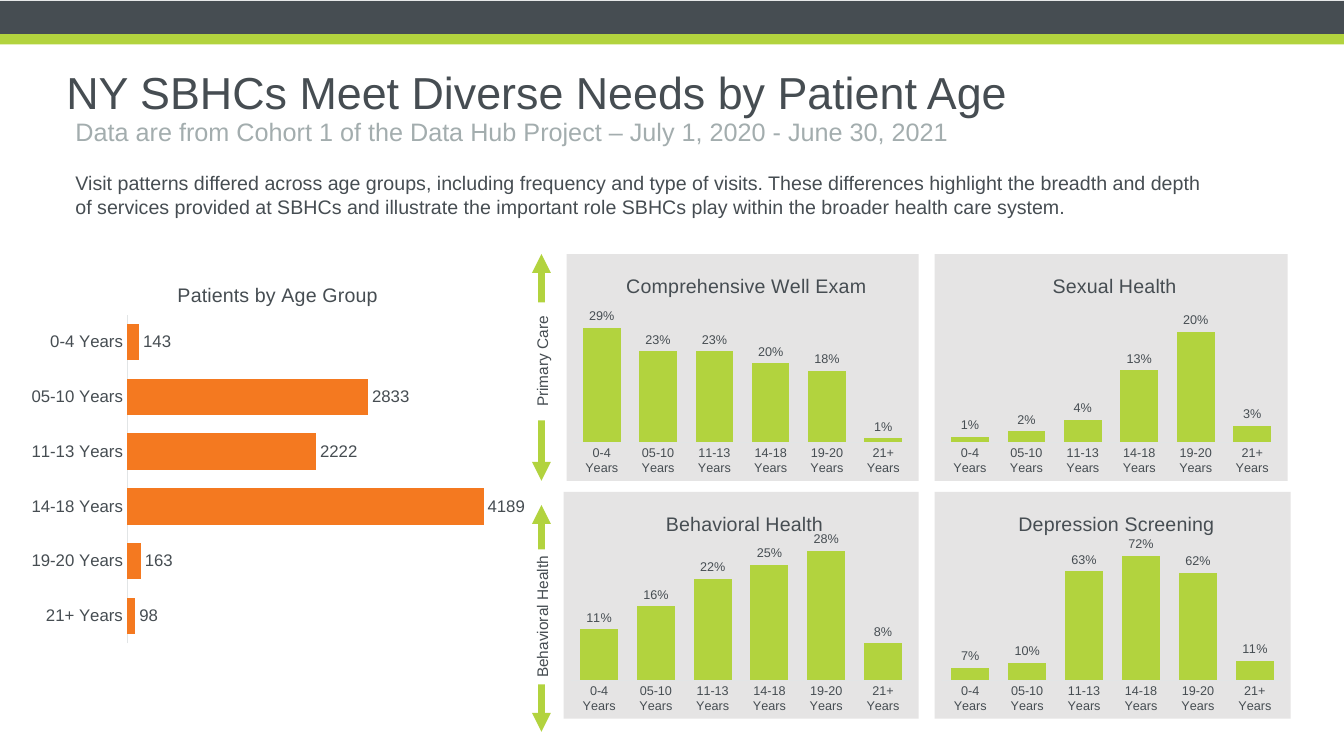
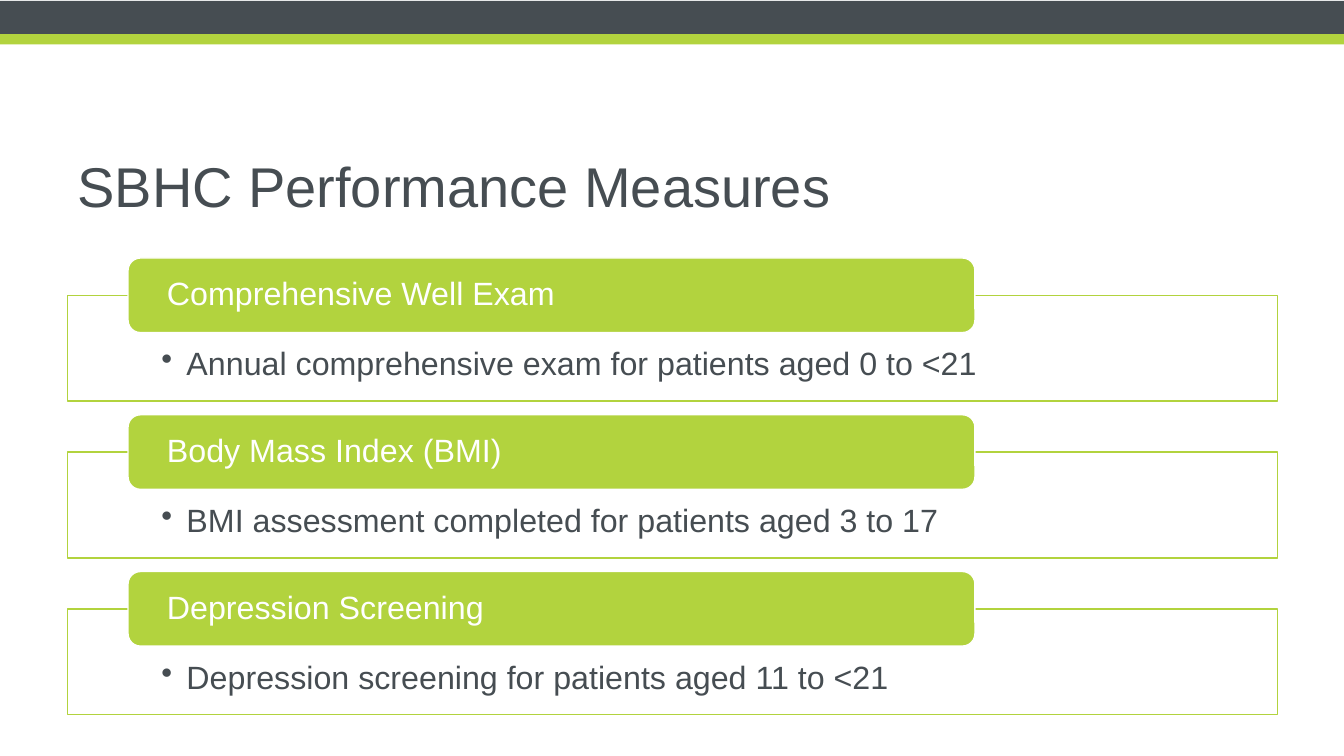
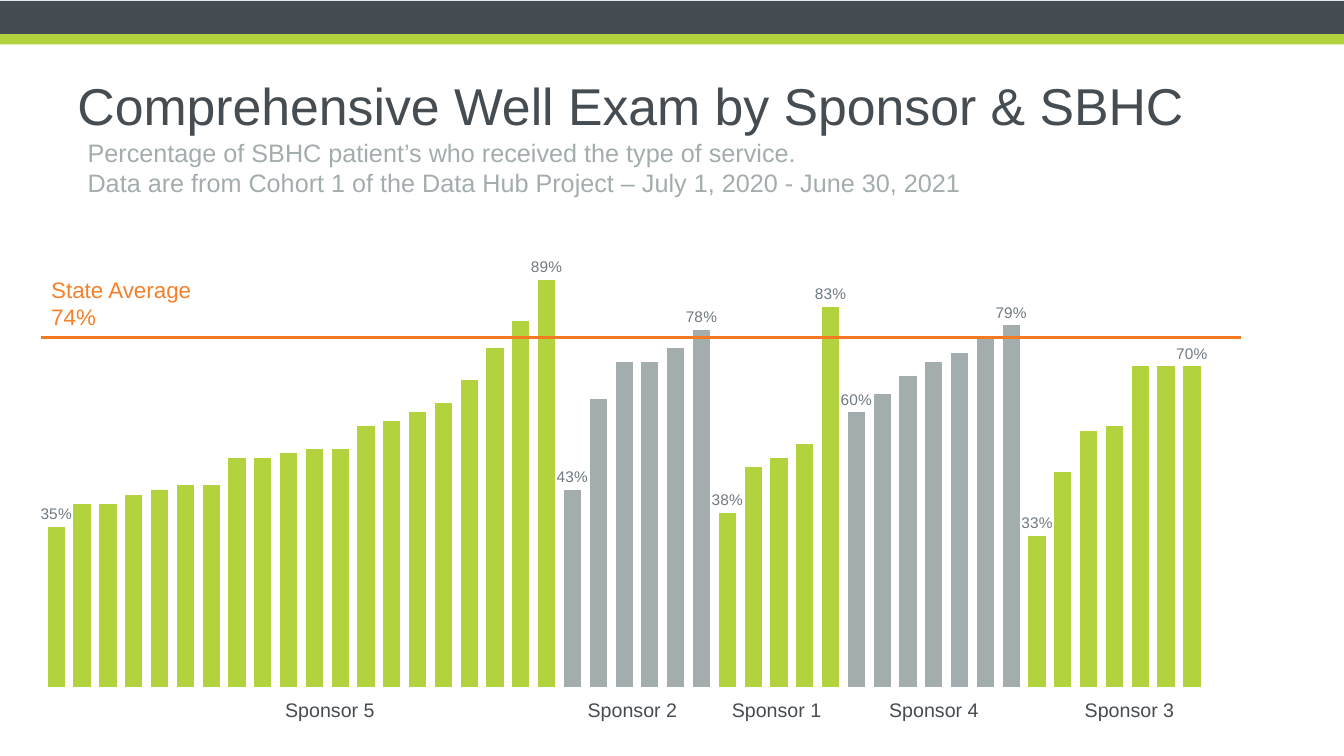
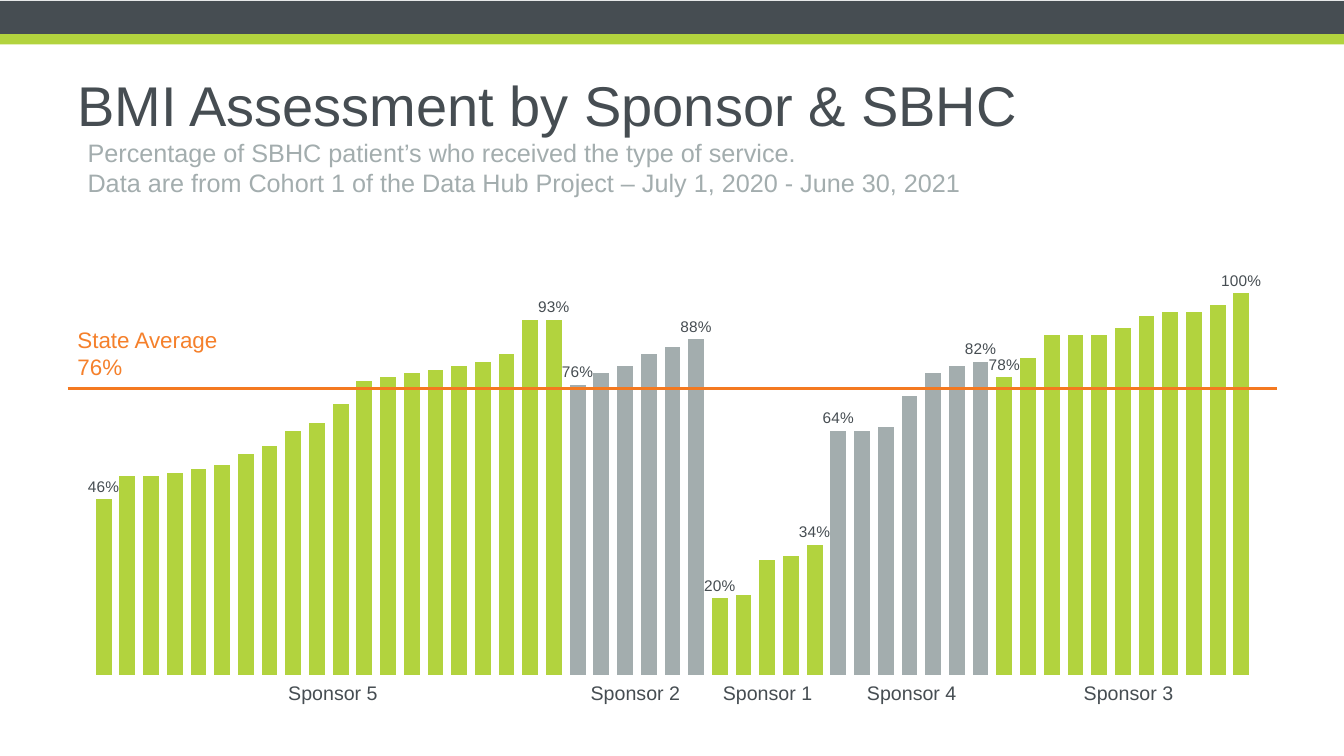
"""Builds four slides on school-based health center visits and performance measures."""
from lxml import etree
from pptx import Presentation
from pptx.chart.data import CategoryChartData
from pptx.dml.color import RGBColor
from pptx.enum.chart import XL_CHART_TYPE as CT, XL_LABEL_POSITION as LP, XL_TICK_MARK as TM
from pptx.enum.shapes import MSO_CONNECTOR as MC, MSO_SHAPE as MS
from pptx.enum.text import MSO_ANCHOR as MA, PP_ALIGN as PA
from pptx.oxml import parse_xml
from pptx.oxml.ns import nsdecls, qn
from pptx.util import Inches, Pt

SLATE = RGBColor(0x46, 0x4D, 0x52)
GREEN = RGBColor(0xB2, 0xD3, 0x3E)
GRAY = RGBColor(0xA3, 0xAD, 0xAE)
STEEL = RGBColor(0x6F, 0x7A, 0x82)
ORANGE = RGBColor(0xF4, 0x79, 0x20)
AMBER = RGBColor(0xF5, 0x80, 0x2B)
PALE = RGBColor(0xE2, 0xE5, 0xE6)
PANEL = RGBColor(0xE5, 0xE4, 0xE4)
WHITE = RGBColor(0xFF, 0xFF, 0xFF)
FONT = "Arial"
WIDTH, HEIGHT = 13.33, 7.5

PERIOD = "Data are from Cohort 1 of the Data Hub Project – July 1, 2020 - June 30, 2021"
SERVICE = "Percentage of SBHC patient’s who received the type of service."
VISITS = ("Visit patterns differed across age groups, including frequency and type of visits. "
          "These differences highlight the breadth and depth of services provided at SBHCs and "
          "illustrate the important role SBHCs play within the broader health care system.")

AGES = ["0-4 Years", "05-10 Years", "11-13 Years", "14-18 Years", "19-20 Years", "21+ Years"]
PATIENTS = [143, 2833, 2222, 4189, 163, 98]

# title, title width, box, axis maximum, values
VISIT_CHARTS = [
    ("Comprehensive Well Exam", 2.38, (5.62, 2.52, 3.49, 2.25), 0.35,
     [0.29, 0.23, 0.23, 0.2, 0.18, 0.01]),
    ("Behavioral Health", 1.56, (5.59, 4.88, 3.52, 2.25), 0.3,
     [0.11, 0.16, 0.22, 0.25, 0.28, 0.08]),
    ("Sexual Health", 1.23, (9.27, 2.52, 3.5, 2.25), 0.25,
     [0.01, 0.02, 0.04, 0.13, 0.2, 0.03]),
    ("Depression Screening", 1.94, (9.27, 4.88, 3.53, 2.25), 0.8,
     [0.07, 0.1, 0.63, 0.72, 0.62, 0.11]),
]
# label, arrow top, label top, label height
CARE_ARROWS = [("Primary Care", 2.52, 3, 1.17), ("Behavioral Health", 5.01, 5.45, 1.34)]

MEASURES = [
    ("Comprehensive Well Exam", "Annual comprehensive exam for patients aged 0 to <21"),
    ("Body Mass Index (BMI)", "BMI assessment completed for patients aged 3 to 17"),
    ("Depression Screening", "Depression screening for patients aged 11 to <21"),
]

SPONSOR_SLIDES = [
    dict(title="Comprehensive Well Exam by Sponsor & SBHC", size=37, chart=(0.19, 2.18), top=1,
         label=STEEL, average="State Average 74%", line=(0.41, 12.31, 3.35), note_w=1.78,
         names_y=6.87, sponsors=[
             ("Sponsor 5", 2.73, [0.35, 0.4, 0.4, 0.42, 0.43, 0.44, 0.44, 0.5, 0.5, 0.51,
                                  0.52, 0.52, 0.57, 0.58, 0.6, 0.62, 0.67, 0.74, 0.8, 0.89]),
             ("Sponsor 2", 5.73, [0.43, 0.63, 0.71, 0.71, 0.74, 0.78]),
             ("Sponsor 1", 7.16, [0.38, 0.48, 0.5, 0.53, 0.83]),
             ("Sponsor 4", 8.72, [0.6, 0.64, 0.68, 0.71, 0.73, 0.76, 0.79]),
             ("Sponsor 3", 10.66, [0.33, 0.47, 0.56, 0.57, 0.7, 0.7, 0.7])]),
    dict(title="BMI Assessment by Sponsor & SBHC", size=40, chart=(0.67, 2.06), top=1.2,
         label=SLATE, average="State Average 76%", line=(0.67, 12.67, 3.85), note_w=1.61,
         names_y=6.71, sponsors=[
             ("Sponsor 5", 2.76, [0.46, 0.52, 0.52, 0.53, 0.54, 0.55, 0.58, 0.6, 0.64, 0.66,
                                  0.71, 0.77, 0.78, 0.79, 0.8, 0.81, 0.82, 0.84, 0.93, 0.93]),
             ("Sponsor 2", 5.76, [0.76, 0.79, 0.81, 0.84, 0.86, 0.88]),
             ("Sponsor 1", 7.07, [0.2, 0.21, 0.3, 0.31, 0.34]),
             ("Sponsor 4", 8.5, [0.64, 0.64, 0.65, 0.73, 0.79, 0.81, 0.82]),
             ("Sponsor 3", 10.65, [0.78, 0.83, 0.89, 0.89, 0.89, 0.91, 0.94, 0.95, 0.95,
                                   0.97, 1])]),
]


def box(x, y, w, h):
    return Inches(x), Inches(y), Inches(w), Inches(h)


def style(font, size, color):
    font.name, font.size, font.bold = FONT, Pt(size), False
    font.color.rgb = color


def write(shape, lines, size, color, anchor=MA.TOP, align=PA.LEFT, wrap=True, insets=None):
    tf = shape.text_frame
    tf.word_wrap, tf.vertical_anchor = wrap, anchor
    if insets:
        tf.margin_left, tf.margin_top, tf.margin_right, tf.margin_bottom = map(Inches, insets)
    for i, line in enumerate(lines):
        p = tf.add_paragraph() if i else tf.paragraphs[0]
        p.alignment = align
        r = p.add_run()
        r.text = line
        style(r.font, size, color)
    return tf


def text(s, at, lines, size, color=SLATE, **options):
    return write(s.shapes.add_textbox(*box(*at)), lines, size, color, **options)


def block(s, at, fill, line=None, kind=MS.RECTANGLE):
    sp = s.shapes.add_shape(kind, *box(*at))
    sp.shadow.inherit = False
    sp.fill.solid()
    sp.fill.fore_color.rgb = fill
    if line is None:
        sp.line.fill.background()
    else:
        sp.line.color.rgb, sp.line.width = line, Pt(1)
    return sp


def rule(s, x1, y1, x2, y2, color, width, arrows=False):
    c = s.shapes.add_connector(MC.STRAIGHT, *box(x1, y1, x2, y2))
    c.line.color.rgb, c.line.width = color, Pt(width)
    if arrows:
        ln = c.line._get_or_add_ln()
        for end in ("a:headEnd", "a:tailEnd"):
            etree.SubElement(ln, qn(end)).set("type", "triangle")
    etree.SubElement(c._element.spPr, qn("a:effectLst"))


def new_slide(prs, title, at, size):
    s = prs.slides.add_slide(prs.slide_layouts[6])
    block(s, (0, 0.01, WIDTH, 0.34), SLATE)
    block(s, (0, 0.34, WIDTH, 0.1), GREEN)
    text(s, (*at, 12, 1.17), [title], size, anchor=MA.MIDDLE)
    return s


def place(parent, index, inner=False, **shares):
    layout = parent.find(qn("c:layout"))
    if layout is None:
        layout = parent.makeelement(qn("c:layout"))
        parent.insert(index, layout)
    manual = etree.SubElement(layout, qn("c:manualLayout"))
    values = {"layoutTarget": "inner"} if inner else {}
    values.update(xMode="edge", yMode="edge")
    values.update({k: f"{v:.3f}" for k, v in shares.items()})
    for name, value in values.items():
        etree.SubElement(manual, qn("c:" + name)).set("val", value)


def bar_chart(s, kind, at, cats, vals, fmt, size, color, top, plot, fill=None):
    data = CategoryChartData(number_format=fmt)
    data.categories = cats
    data.add_series("Series 1", vals)
    ch = s.shapes.add_chart(kind, *box(*at), data).chart
    style(ch.font, size, SLATE)
    ch.has_legend = ch.has_title = False
    area = f'<a:solidFill><a:srgbClr val="{fill}"/></a:solidFill>' if fill else "<a:noFill/>"
    ch.element.find(qn("c:chart")).addnext(parse_xml(
        f'<c:spPr {nsdecls("c", "a")}>{area}<a:ln><a:noFill/></a:ln></c:spPr>'))
    x, y, w, h = plot
    place(ch.element.find(".//" + qn("c:plotArea")), 0, inner=True, x=x, y=y, w=w, h=h)
    va, ca = ch.value_axis, ch.category_axis
    va.minimum_scale, va.maximum_scale = 0, top
    va.has_major_gridlines = va.visible = False
    ca.major_tick_mark = TM.NONE
    ca.format.line.color.rgb, ca.format.line.width = PALE, Pt(0.75)
    bars = ch.plots[0]
    bars.gap_width, bars.vary_by_categories = 50, False
    if kind == CT.COLUMN_CLUSTERED:
        bars.overlap = -27
    ser = bars.series[0]
    ser.format.fill.solid()
    ser.format.fill.fore_color.rgb = color
    return ch, ser


def age_chart(s, kind, title, title_w, at, cats, vals, fmt, size, color, top, plot, fill=None):
    ch, ser = bar_chart(s, kind, at, cats, vals, fmt, size, color, top, plot, fill)
    ch.has_title = True
    r = ch.chart_title.text_frame.paragraphs[0].add_run()
    r.text = title
    style(r.font, 14, SLATE)
    place(ch.chart_title.element, 1, x=(1 - title_w / at[2]) / 2, y=0.02 + 0.11 / at[3])
    style(ch.category_axis.tick_labels.font, size, SLATE)
    labels = ser.data_labels
    labels.show_value, labels.position = True, LP.OUTSIDE_END
    labels.number_format, labels.number_format_is_linked = fmt, False
    style(labels.font, size, SLATE)


def age_slide(prs):
    s = new_slide(prs, "NY SBHCs Meet Diverse Needs by Patient Age", (0.56, 0.32), 32)
    p = text(s, (0.56, 1.65, 11.48, 0.62), [VISITS], 14).paragraphs[0]
    p.space_before = Pt(3)
    p._p.get_or_add_pPr().set("marL", str(Inches(0.09)))
    text(s, (0.65, 1.1, 11.49, 0.4), [PERIOD], 18, GRAY)
    for label, top, y, h in CARE_ARROWS:
        rule(s, 5.37, top + 2.25, 5.37, top, GREEN, 4.5, arrows=True)
        tf = write(block(s, (5.16, y, 0.43, h), WHITE), [label], 11, SLATE,
                   anchor=MA.MIDDLE, align=PA.CENTER, wrap=False)
        tf._txBody.bodyPr.set("vert", "vert270")
    for title, title_w, at, top, vals in VISIT_CHARTS:
        age_chart(s, CT.COLUMN_CLUSTERED, title, title_w, at, AGES, vals, "0%", 9, GREEN, top,
                  (0.02, 0.22, 0.96, 0.61), PANEL)
    age_chart(s, CT.BAR_CLUSTERED, "Patients by Age Group", 1.97, (0.21, 2.58, 5, 3.88),
              AGES[::-1], PATIENTS[::-1], "General", 12, ORANGE, 4500, (0.21, 0.14, 0.76, 0.84))


def measures_slide(prs):
    s = new_slide(prs, "SBHC Performance Measures", (0.67, 1.25), 40)
    for i, (name, detail) in enumerate(MEASURES):
        y = 2.56 + 3.11 * i / 2
        frame = block(s, (0.67, y + 0.37, 12, 1.05), WHITE, GREEN)
        p = write(frame, [detail], 23, SLATE, insets=(0.93, 0.52, 0.93, 0.18)).paragraphs[0]
        p.line_spacing = 0.9
        pPr = p._p.get_or_add_pPr()
        pPr.set("marL", str(Inches(0.25)))
        pPr.set("indent", str(-Inches(0.25)))
        etree.SubElement(pPr, qn("a:buChar")).set("char", "•")
        head = block(s, (1.27, y, 8.4, 0.74), GREEN, WHITE, MS.ROUNDED_RECTANGLE)
        tf = write(head, [name], 23, WHITE, anchor=MA.MIDDLE, insets=(0.35, 0, 0.35, 0))
        tf.paragraphs[0].line_spacing = 0.9


def sponsor_slide(prs, d):
    s = new_slide(prs, d["title"], (0.67, 0.45), d["size"])
    vals = [v for _, _, group in d["sponsors"] for v in group]
    ch, ser = bar_chart(s, CT.COLUMN_CLUSTERED, (*d["chart"], 12, 4.73),
                        [str(i + 1) for i in range(len(vals))], vals, "0%", 11, GREEN,
                        d["top"], (0.02, 0.02, 0.96, 0.96))
    ch.category_axis.visible = False
    ser.data_labels.show_value = False
    first = 0
    for i, (name, x, group) in enumerate(d["sponsors"]):
        last = first + len(group) - 1
        if i % 2:
            for n in range(first, last + 1):
                fill = ser.points[n].format.fill
                fill.solid()
                fill.fore_color.rgb = GRAY
        for n in (first, last):
            label = ser.points[n].data_label
            style(label.font, 11, d["label"])
            label.position = LP.OUTSIDE_END
        text(s, (x, d["names_y"], 1.09, 0.34), [name], 14, wrap=False)
        first = last + 1
    text(s, (0.77, 1.31, 11.49, 0.71), [SERVICE, PERIOD], 18, GRAY)
    x1, x2, y = d["line"]
    rule(s, x1, y, x2, y, ORANGE, 2.25)
    text(s, (x1, y - 0.66, d["note_w"], 0.64), [d["average"]], 16, AMBER)


def main():
    prs = Presentation()
    prs.slide_width, prs.slide_height = Inches(WIDTH), Inches(HEIGHT)
    age_slide(prs)
    measures_slide(prs)
    for d in SPONSOR_SLIDES:
        sponsor_slide(prs, d)
    prs.save("out.pptx")


if __name__ == "__main__":
    main()
